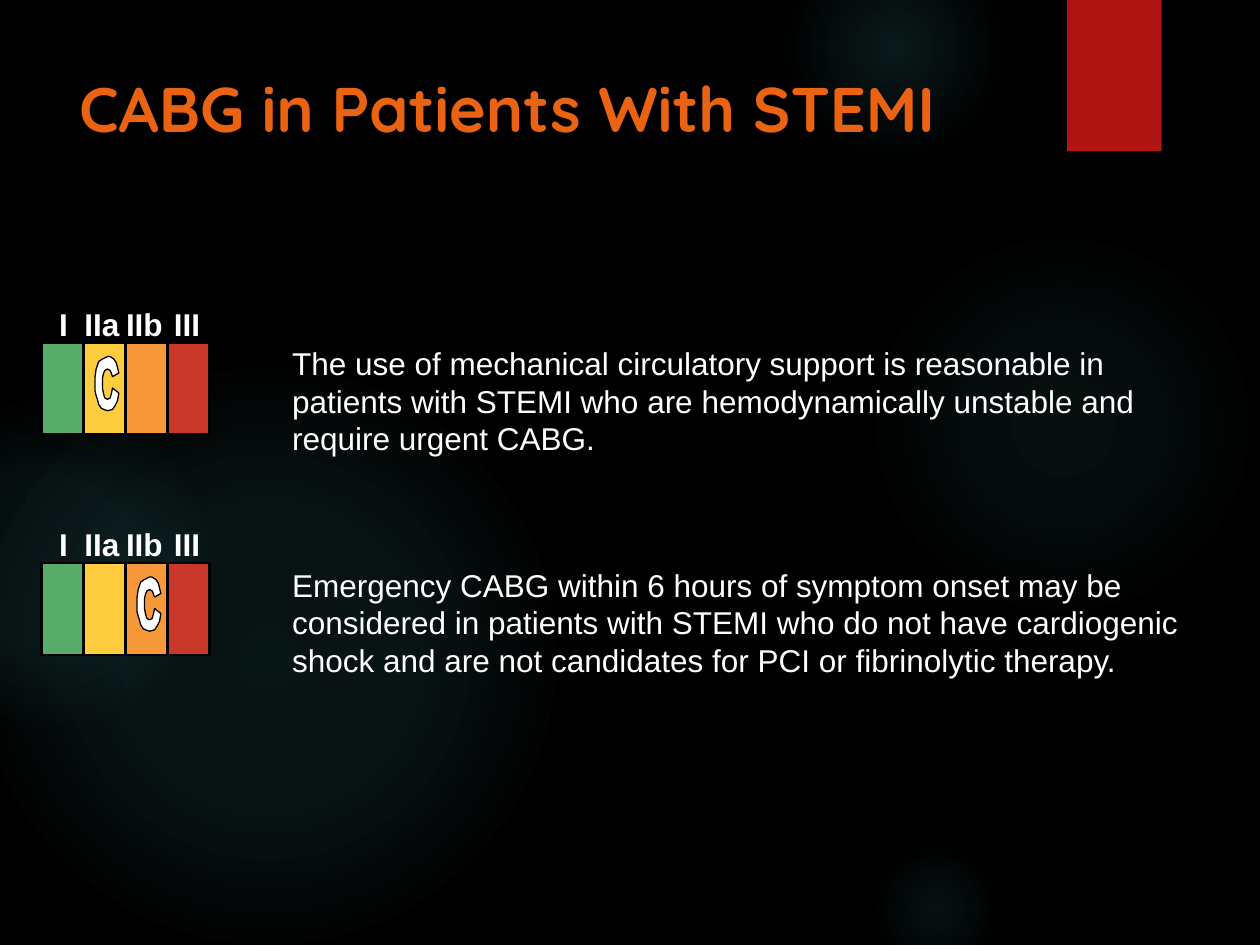
import pptx
import pptx.dml.color
import pptx.enum.shapes
import pptx.oxml
import pptx.oxml.ns
import pptx.util

Inches = pptx.util.Inches
Pt = pptx.util.Pt
SHAPES = pptx.enum.shapes.MSO_SHAPE

GLOWS = [
    (6.89, 1.83, 3.08, [(0, 7), (36, 6), (69, 0)]),
    (6.22, -0.5, 1.75, [(0, 14), (36, 7), (73, 0)]),
    (6.89, 6.67, 1.08, [(0, 9), (36, 5), (66, 0)]),
    (-0.17, 2.92, 4.58, [(0, 11), (36, 10), (75, 0)]),
    (-0.92, 3.17, 2.58, [(0, 8), (36, 8), (72, 0)]),
]
CLASSES = [
    ("I", "57AC69", 0.47, 0.09),
    ("IIa", "FDCC3F", 0.67, 0.3),
    ("IIb", "F7983A", 1, 0.31),
    ("III", "C9382A", 1.38, 0.23),
]
RECOMMENDATIONS = [
    (2.72, 2.68, 1, "The use of mechanical circulatory support is reasonable in patients "
     "with STEMI who are hemodynamically unstable and require urgent CABG."),
    (4.47, 4.44, 2, "Emergency CABG within 6 hours of symptom onset may be considered in "
     "patients with STEMI who do not have cardiogenic shock and are not candidates for "
     "PCI or fibrinolytic therapy."),
]
LETTER_C = [
    (14, 25), (19, 29), (18, 35), (16, 39), (14, 42), (10, 43), (7, 42), (5, 41),
    (3, 38), (2, 34), (1, 31), (0, 27), (0, 17), (1, 10), (3, 4), (6, 2), (8, 1),
    (10, 0), (12, 0), (15, 2), (17, 5), (18, 9), (19, 13), (14, 16), (13, 13),
    (12, 11), (10, 10), (8, 11), (7, 13), (6, 17), (6, 25), (7, 30), (8, 33),
    (10, 34), (12, 33), (13, 30),
]
CELL_WIDTH = 1 / 3


def color(value):
    return pptx.dml.color.RGBColor.from_string(value)


def paint(shape, fill, line_width=0):
    shape.shadow.inherit = False
    shape.fill.solid()
    shape.fill.fore_color.rgb = color(fill)
    if line_width:
        shape.line.color.rgb = color("000000")
        shape.line.width = Pt(line_width)
    else:
        shape.line.fill.background()


def add_rectangle(shapes, left, top, width, height, fill, line_width=0):
    shape = shapes.add_shape(
        SHAPES.RECTANGLE, Inches(left), Inches(top), Inches(width), Inches(height))
    paint(shape, fill, line_width)


def add_glow(shapes, left, top, size, stops):
    glow = shapes.add_shape(
        SHAPES.OVAL, Inches(left), Inches(top), Inches(size), Inches(size))
    paint(glow, "50B9C1")
    stop_xml = "".join(
        f'<a:gs pos="{position * 1000}"><a:srgbClr val="50B9C1">'
        f'<a:alpha val="{alpha * 1000}"/></a:srgbClr></a:gs>'
        for position, alpha in stops)
    gradient = pptx.oxml.parse_xml(
        f'<a:gradFill {pptx.oxml.ns.nsdecls("a")}><a:gsLst>{stop_xml}</a:gsLst>'
        '<a:path path="circle"><a:fillToRect l="50000" t="50000" r="50000" b="50000"/>'
        '</a:path></a:gradFill>')
    properties = glow.element.spPr
    solid = properties.find(pptx.oxml.ns.qn("a:solidFill"))
    properties.replace(solid, gradient)


def add_text(shapes, left, top, width, height, text, size=18, font="Arial",
             fill="FFFFFF", bold=False, label=False):
    box = shapes.add_textbox(Inches(left), Inches(top), Inches(width), Inches(height))
    frame = box.text_frame
    frame.word_wrap = True
    if label:
        frame.margin_left = frame.margin_right = 0
        frame.margin_top = frame.margin_bottom = 0
    frame.text = text
    span = frame.paragraphs[0].runs[0]
    span.font.size = Pt(size)
    span.font.name = font
    span.font.bold = bold
    span.font.color.rgb = color(fill)


def add_letter(shapes, left, top):
    builder = shapes.build_freeform(*LETTER_C[0], scale=Inches(0.01))
    builder.add_line_segments(LETTER_C[1:], close=True)
    paint(builder.convert_to_shape(Inches(left), Inches(top)), "FFFFFF", 0.75)


def add_class_scale(page, top, graded):
    shapes = page.shapes.add_group_shape().shapes
    for index, (name, fill, label_left, label_width) in enumerate(CLASSES):
        left = 0.33 + index * CELL_WIDTH
        add_rectangle(shapes, left, top, CELL_WIDTH, 0.73, fill, 1.5)
        add_text(shapes, label_left, top - 0.3, label_width, 0.3, name,
                 bold=True, label=True)
    add_letter(shapes, 0.42 + graded * CELL_WIDTH, top + 0.11)


def main():
    deck = pptx.Presentation()
    deck.slide_width = Inches(10)
    deck.slide_height = Inches(7.5)
    page = deck.slides.add_slide(deck.slide_layouts[6])
    page.background.fill.solid()
    page.background.fill.fore_color.rgb = color("000000")
    for glow in GLOWS:
        add_glow(page.shapes, *glow)
    add_rectangle(page.shapes, 8.47, 0, 0.75, 1.2, "B01513")
    add_text(page.shapes, 0.53, 0.5, 7.72, 1.53, "CABG in Patients With STEMI",
             size=36, font="Quicksand", fill="EA6312", bold=True)
    for scale_top, text_top, graded, text in RECOMMENDATIONS:
        add_text(page.shapes, 2.22, text_top, 7.42, 1.01, text)
        add_class_scale(page, scale_top, graded)
    deck.save("out.pptx")


if __name__ == "__main__":
    main()
